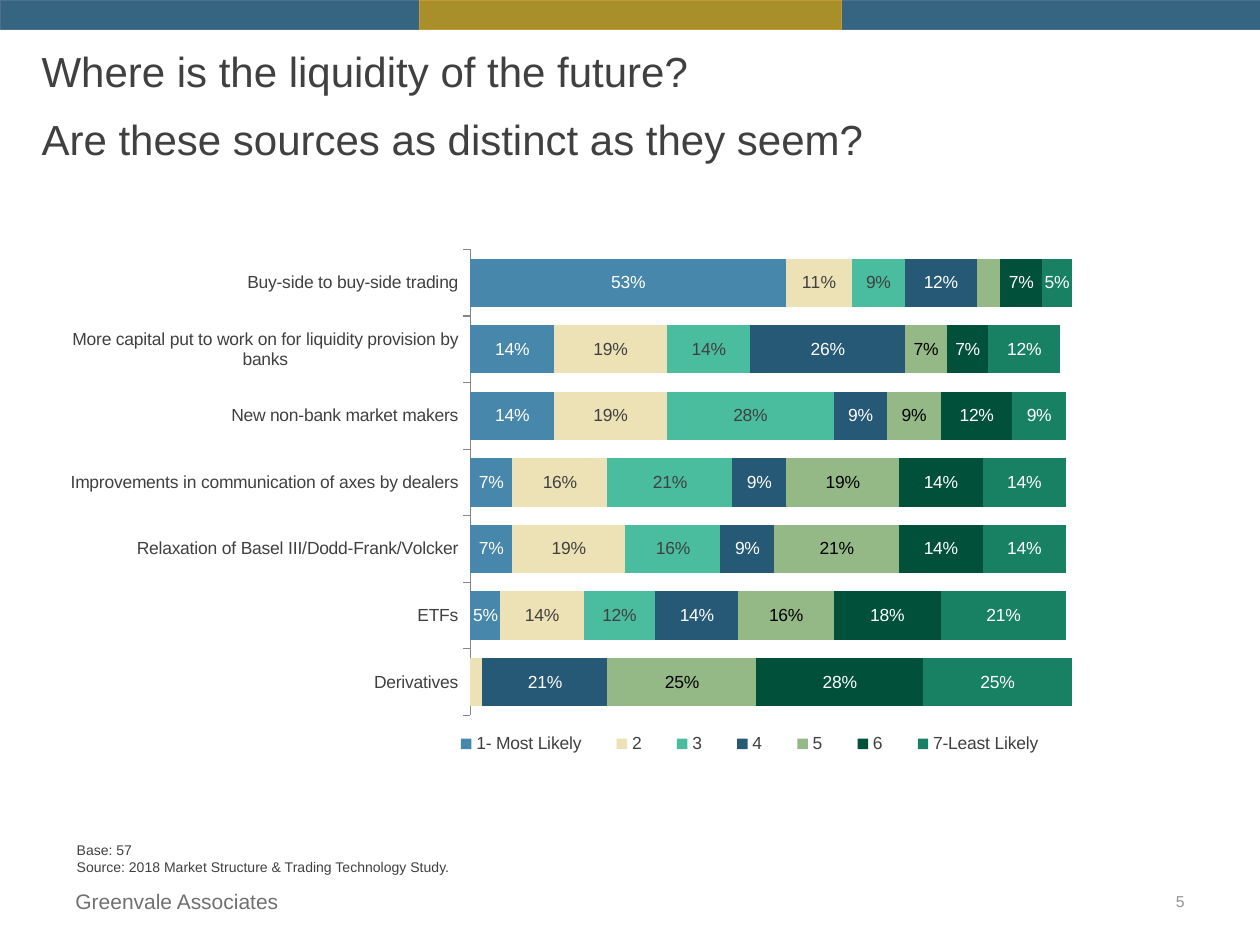
from lxml import etree
from pptx import Presentation
from pptx.chart.data import CategoryChartData
from pptx.dml.color import RGBColor
from pptx.enum.chart import XL_CHART_TYPE, XL_LEGEND_POSITION, XL_TICK_MARK
from pptx.enum.shapes import MSO_SHAPE
from pptx.enum.text import MSO_ANCHOR, MSO_AUTO_SIZE, PP_ALIGN
from pptx.oxml.ns import qn
from pptx.util import Inches, Pt

STACKED_BARS = XL_CHART_TYPE.BAR_STACKED
LEGEND_BELOW = XL_LEGEND_POSITION.BOTTOM
TICK_OUTSIDE, NO_TICK = XL_TICK_MARK.OUTSIDE, XL_TICK_MARK.NONE
BAND = MSO_SHAPE.FLOWCHART_PROCESS
TOP, MIDDLE = MSO_ANCHOR.TOP, MSO_ANCHOR.MIDDLE
LEFT, RIGHT = PP_ALIGN.LEFT, PP_ALIGN.RIGHT


class Theme:
    font = "Arial"
    text = RGBColor.from_string("404040")
    footer = RGBColor.from_string("707070")
    number = RGBColor.from_string("939393")
    axis = RGBColor.from_string("868686")
    white = RGBColor.from_string("FFFFFF")
    black = RGBColor.from_string("000000")
    title_size, footer_size, chart_size = Pt(24), Pt(12), Pt(10)
    number_size, note_size = Pt(9), Pt(8)


deck = Presentation()
deck.slide_width, deck.slide_height = Inches(10), Inches(7.5)
page = deck.slides.add_slide(deck.slide_layouts[5])


def area(left, top, width, height):
    """Turn percentages of the slide's width and height into lengths."""
    across, down = deck.slide_width / 100, deck.slide_height / 100
    return int(left * across), int(top * down), int(width * across), int(height * down)


def set_chart_layout(parent, index, inner, **shares):
    """Place a plot area or legend by shares of the chart's size."""
    for old in parent.findall(qn("c:layout")):
        parent.remove(old)
    layout = etree.Element(qn("c:layout"))
    parent.insert(index, layout)
    manual = etree.SubElement(layout, qn("c:manualLayout"))
    settings = {"layoutTarget": "inner"} if inner else {}
    settings.update(xMode="edge", yMode="edge", **shares)
    for name, value in settings.items():
        etree.SubElement(manual, qn(f"c:{name}")).set("val", str(value))


# Colour bands along the top edge
for left, width, fill, line in [
    (0, 100, "356580", "4E708D"),
    (33.3, 33.5, "A88F29", "C59837"),
]:
    band = page.shapes.add_shape(BAND, *area(left, 0, width, 3.07))
    band.shadow.inherit = False
    band.fill.solid()
    band.fill.fore_color.rgb = RGBColor.from_string(fill)
    band.line.color.rgb = RGBColor.from_string(line)
    band.line.width = Pt(0.5)

# Stacked bars: how each source of liquidity was ranked
data = CategoryChartData(number_format="0%")
data.categories = [
    "Buy-side to buy-side trading",
    "More capital put to work on for liquidity provision by banks",
    "New non-bank market makers",
    "Improvements in communication of axes by dealers",
    "Relaxation of Basel III/Dodd-Frank/Volcker",
    "ETFs",
    "Derivatives",
]
# Name, values, bar colour, label colour, bars too short for a label
ranks = [
    ("1- Most Likely", (.53, .14, .14, .07, .07, .05, None), "4787AB", Theme.white, []),
    ("2", (.11, .19, .19, .16, .19, .14, .02), "EDE2B5", Theme.text, [6]),
    ("3", (.09, .14, .28, .21, .16, .12, None), "49BD9D", Theme.text, []),
    ("4", (.12, .26, .09, .09, .09, .14, .21), "265976", Theme.white, []),
    ("5", (.04, .07, .09, .19, .21, .16, .25), "94B886", Theme.black, [0]),
    ("6", (.07, .07, .12, .14, .14, .18, .28), "00503A", Theme.white, []),
    ("7-Least Likely", (.05, .12, .09, .14, .14, .21, .25), "188164", Theme.white, []),
]
for name, values, *_ in ranks:
    data.add_series(name, values)

frame = page.shapes.add_chart(STACKED_BARS, *area(5.6, 20.4, 88.9, 60.13), data)
chart = frame.chart
chart.has_title = False
chart.font.name = Theme.font
chart.font.size = Theme.chart_size
chart.font.color.rgb = Theme.text

plot = chart.plots[0]
plot.gap_width, plot.overlap = 38, 100
plot.vary_by_categories = False
for series, (_, _, colour, label_colour, hidden) in zip(plot.series, ranks):
    series.format.fill.solid()
    series.format.fill.fore_color.rgb = RGBColor.from_string(colour)
    labels = series.data_labels
    labels.show_value = True
    labels.number_format, labels.number_format_is_linked = "0%", False
    labels.font.name = Theme.font
    labels.font.size = Theme.chart_size
    labels.font.color.rgb = label_colour
    for point in hidden:
        label = etree.Element(qn("c:dLbl"))
        etree.SubElement(label, qn("c:idx")).set("val", str(point))
        etree.SubElement(label, qn("c:delete")).set("val", "1")
        labels._element.insert(0, label)

sources = chart.category_axis
sources.reverse_order = True
sources.major_tick_mark, sources.minor_tick_mark = TICK_OUTSIDE, NO_TICK
sources.has_major_gridlines = False
sources.format.line.color.rgb = Theme.axis
sources.tick_labels.font.size = Theme.chart_size
shares = chart.value_axis
shares.minimum_scale, shares.maximum_scale = 0, 1.2
shares.has_major_gridlines = False
shares.visible = False

chart.has_legend = True
chart.legend.position = LEGEND_BELOW
chart.legend.include_in_layout = False
chart.legend.font.size = Theme.chart_size
set_chart_layout(chart._chartSpace.chart.plotArea, 0, True, x=0.355, y=0.1, w=0.64, h=0.82)
set_chart_layout(chart.legend._element, 1, False, x=0.32, y=0.94, w=0.57, h=0.06)

# Title, source note, footer and page number
title = page.shapes.title
title.left, title.top, title.width, title.height = area(2.3, 4.13, 90.3, 14)
note, footer, number = [
    page.shapes.add_textbox(*area(*place))
    for place in [(5.1, 88.4, 88.9, 4.67), (5, 92.67, 33.8, 5.33), (72.5, 92.67, 22.5, 5.33)]
]
for box, lines, size, colour, align, anchor, gap in [
    (title, ["Where is the liquidity of the future?",
             "Are these sources as distinct as they seem?"],
     Theme.title_size, Theme.text, LEFT, TOP, 10),
    (note, ["Base: 57", "Source: 2018 Market Structure & Trading Technology Study."],
     Theme.note_size, Theme.text, LEFT, TOP, 0),
    (footer, ["Greenvale Associates"], Theme.footer_size, Theme.footer, LEFT, MIDDLE, 0),
    (number, ["5"], Theme.number_size, Theme.number, RIGHT, MIDDLE, 0),
]:
    text = box.text_frame
    text.word_wrap = True
    text.auto_size = MSO_AUTO_SIZE.NONE
    text.vertical_anchor = anchor
    for index, line in enumerate(lines):
        para = text.add_paragraph() if index else text.paragraphs[0]
        para.alignment = align
        para.space_before = Pt(gap)
        span = para.add_run()
        span.text = line
        span.font.name = Theme.font
        span.font.size = size
        span.font.color.rgb = colour

deck.save("out.pptx")
